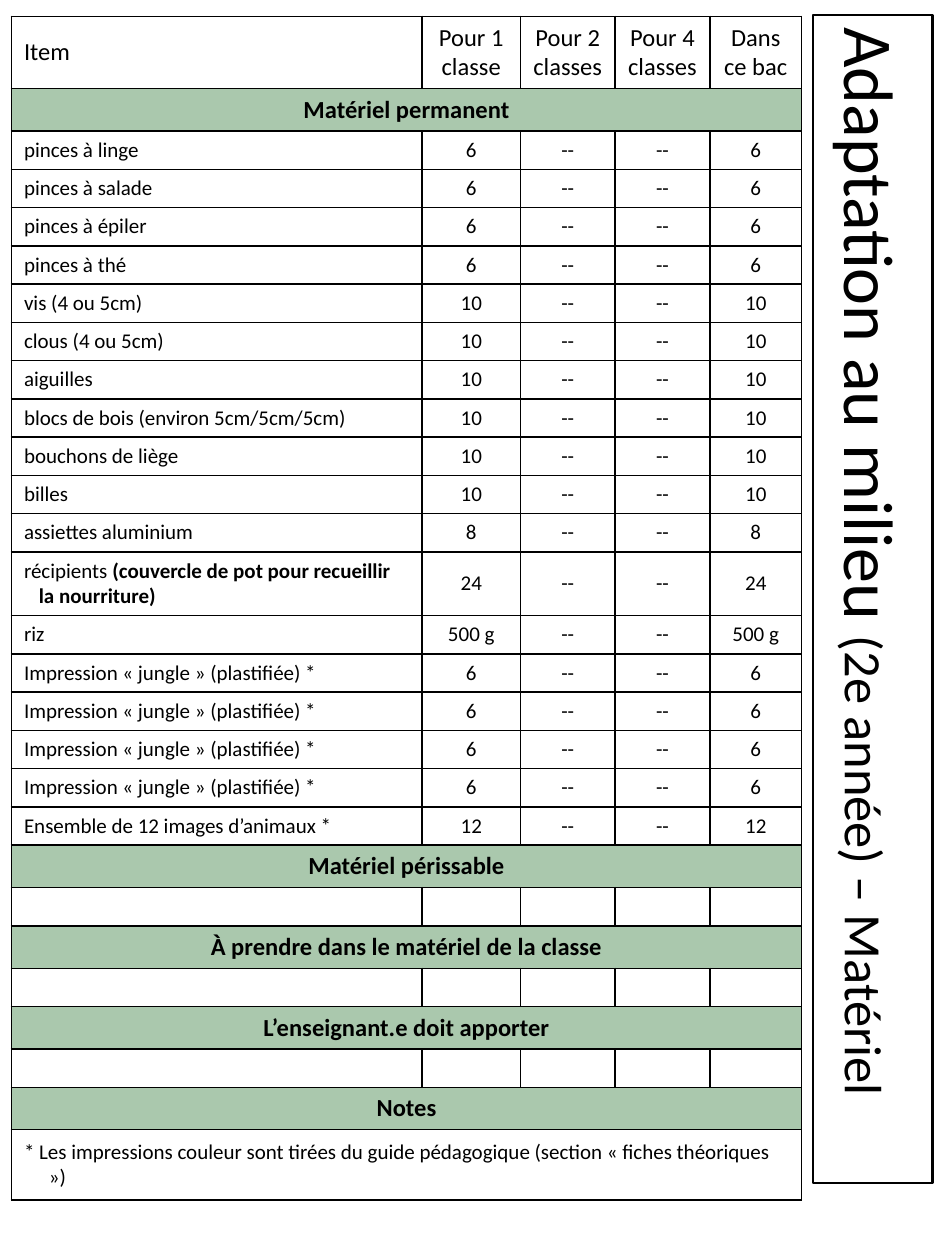
from lxml import etree
from pptx import Presentation
from pptx import util as u
from pptx.dml.color import RGBColor
from pptx.enum import text
from pptx.oxml import ns

BLACK = RGBColor(0x00, 0x00, 0x00)
GREEN = RGBColor(0xAA, 0xC8, 0xAD)
FONT = "Calibri"
LEFT, CENTER = text.PP_ALIGN.LEFT, text.PP_ALIGN.CENTER

TITLE_BOX = (5.82, 10.87, 23.55, 2.41)
TABLE_BOX = (0.23, 0.33, 15.93, 23.6)
COLUMNS = (8.28, 1.98, 1.91, 1.91, 1.85)
HEAD_HEIGHT, SECTION_HEIGHT, ITEM_HEIGHT = 1.4, 0.84, 0.74
LONG_HEIGHT, NOTE_HEIGHT = 1.24, 1.42

HEADINGS = ("Item", "Pour 1 classe", "Pour 2 classes", "Pour 4 classes", "Dans ce bac")
PRINT = ("Impression « jungle » (plastifiée) *", "6")
ITEMS = [
    ("pinces à linge ", "6"),
    ("pinces à salade", "6"),
    ("pinces à épiler ", "6"),
    ("pinces à thé", "6"),
    ("vis (4 ou 5cm) ", "10"),
    ("clous (4 ou 5cm) ", "10"),
    ("aiguilles", "10"),
    ("blocs de bois (environ 5cm/5cm/5cm) ", "10"),
    ("bouchons de liège ", "10"),
    ("billes", "10"),
    ("assiettes aluminium ", "8"),
    ("récipients ", "24", "(couvercle de pot pour recueillir la nourriture)"),
    ("riz", "500 g"),
    *[PRINT] * 4,
    ("Ensemble de 12 images d’animaux *", "12"),
]
EMPTY_SECTIONS = (
    "Matériel périssable",
    "À prendre dans le matériel de la classe",
    "L’enseignant.e doit apporter",
)
NOTE = ("* Les impressions couleur sont tirées du guide pédagogique "
        "(section « fiches théoriques »)")


def add_span(para, words, size, bold=False):
    span = para.add_run()
    span.text = words
    values = {"name": FONT, "size": u.Pt(size), "bold": bold}
    for name, value in values.items():
        setattr(span.font, name, value)
    span.font.color.rgb = BLACK


def draw_borders(cell):
    properties = cell._tc.get_or_add_tcPr()
    for side in ("a:lnL", "a:lnR", "a:lnT", "a:lnB"):
        line = etree.SubElement(properties, ns.qn(side), w=str(u.Pt(1)))
        fill = etree.SubElement(line, ns.qn("a:solidFill"))
        etree.SubElement(fill, ns.qn("a:srgbClr"), val=str(BLACK))


def fill_cell(cell, spans=(), size=12, align=LEFT, hang=0):
    cell.vertical_anchor = text.MSO_ANCHOR.MIDDLE
    para = cell.text_frame.paragraphs[0]
    para.alignment = align
    if hang:
        indent = u.Cm(hang)
        layout = para._p.get_or_add_pPr()
        layout.set("marL", str(indent))
        layout.set("indent", str(-indent))
    for words, bold in spans:
        add_span(para, words, size, bold)
    if not spans:
        etree.SubElement(para._p, ns.qn("a:endParaRPr"), sz=str(size * 100))


def heading_row(cells):
    for index, (cell, words) in enumerate(zip(cells, HEADINGS)):
        fill_cell(cell, [(words, False)], 14, CENTER if index else LEFT)


def section_row(cells, title):
    cells[0].merge(cells[-1])
    fill_cell(cells[0], [(title, True)], 14, CENTER)
    cells[0].fill.solid()
    cells[0].fill.fore_color.rgb = GREEN


def item_row(cells, name, amount, detail=None):
    spans = [(name, False)] + ([(detail, True)] if detail else [])
    fill_cell(cells[0], spans, hang=0.3)
    for cell, words in zip(cells[1:], (amount, "--", "--", amount)):
        fill_cell(cell, [(words, False)], align=CENTER)


def empty_row(cells):
    for cell in cells:
        fill_cell(cell)


def note_row(cells, words):
    cells[0].merge(cells[-1])
    fill_cell(cells[0], [(words, False)], hang=0.5)


def list_rows():
    rows = [(HEAD_HEIGHT, heading_row, ()),
            (SECTION_HEIGHT, section_row, ("Matériel permanent",))]
    for item in ITEMS:
        height = LONG_HEIGHT if len(item) > 2 else ITEM_HEIGHT
        rows.append((height, item_row, item))
    for title in EMPTY_SECTIONS:
        rows.append((SECTION_HEIGHT, section_row, (title,)))
        rows.append((ITEM_HEIGHT, empty_row, ()))
    rows.append((SECTION_HEIGHT, section_row, ("Notes",)))
    rows.append((NOTE_HEIGHT, note_row, (NOTE,)))
    return rows


def add_material_table(page, box):
    rows = list_rows()
    frame = page.shapes.add_table(len(rows), len(COLUMNS), *map(u.Cm, box))
    table = frame.table
    table.first_row = table.horz_banding = False
    for column, share in zip(table.columns, COLUMNS):
        column.width = u.Cm(share * box[2] / sum(COLUMNS))
    for row, (height, write, values) in zip(table.rows, rows):
        row.height = u.Cm(height)
        cells = list(row.cells)
        for cell in cells:
            draw_borders(cell)
            cell.fill.background()
        write(cells, *values)


def place_title(page, box):
    title = page.shapes.title
    for name, value in zip(("left", "top", "width", "height"), box):
        setattr(title, name, u.Cm(value))
    title.rotation = 90
    title.line.color.rgb = BLACK
    title.line.width = u.Pt(1.5)
    frame = title.text_frame
    settings = {"word_wrap": True, "auto_size": text.MSO_AUTO_SIZE.NONE,
                "vertical_anchor": text.MSO_ANCHOR.MIDDLE}
    for name, value in settings.items():
        setattr(frame, name, value)
    para = frame.paragraphs[0]
    para.alignment = LEFT
    add_span(para, "Adaptation au milieu ", 40)
    add_span(para, "(2e année) – Matériel", 30)


def main():
    deck = Presentation()
    deck.slide_width, deck.slide_height = u.Cm(19.05), u.Cm(25.4)
    page = deck.slides.add_slide(deck.slide_layouts[5])
    place_title(page, TITLE_BOX)
    add_material_table(page, TABLE_BOX)
    deck.save("out.pptx")


if __name__ == "__main__":
    main()
